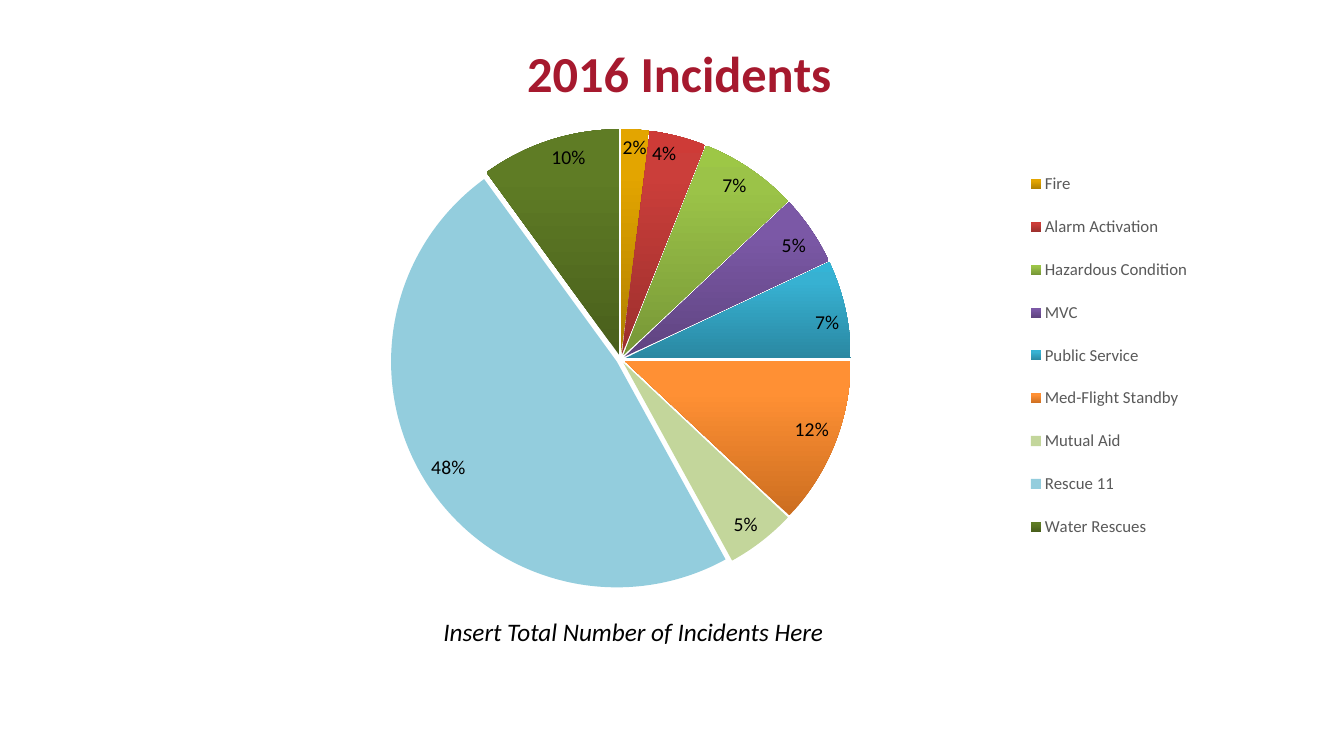
from dataclasses import dataclass

from lxml import etree
from pptx import Presentation
from pptx.chart.data import CategoryChartData
from pptx.dml.color import RGBColor
from pptx.enum.chart import XL_CHART_TYPE as Kind
from pptx.enum.chart import XL_LABEL_POSITION as Spot
from pptx.enum.chart import XL_LEGEND_POSITION as Side
from pptx.oxml import parse_xml
from pptx.oxml.ns import qn
from pptx.util import Inches, Pt

FONT = "Calibri"


@dataclass
class Slice:
    label: str
    share: int
    shades: tuple[str, ...]  # one flat colour, or dark to light


SLICES = [
    Slice("Fire", 2, ("AF7F00", "E3A500", "E4A500")),
    Slice("Alarm Activation", 4, ("9C2F2D", "CB3E3A", "CE3B37")),
    Slice("Hazardous Condition", 7, ("779737", "9BC348", "9DC746")),
    Slice("MVC", 5, ("5F4480", "7B58A6", "7C57A8")),
    Slice("Public Service", 7, ("2A88A2", "37B1D2", "34B4D6")),
    Slice("Med-Flight Standby", 12, ("CC6E20", "FF9034", "FF9136")),
    Slice("Mutual Aid", 5, ("C3D69B",)),
    Slice("Rescue 11", 48, ("93CDDD",)),
    Slice("Water Rescues", 10, ("495F1C", "5F7C25", "607E23")),
]


def style(font, color: str, **values) -> None:
    font.color.rgb = RGBColor.from_string(color)
    for key, value in ({"name": FONT} | values).items():
        setattr(font, key, value)


def paint(fill, shades: tuple[str, ...]) -> None:
    """Fill flat, or with a gradient that runs from bottom to top."""
    if len(shades) == 1:
        fill.solid()
        fill.fore_color.rgb = RGBColor.from_string(shades[0])
        return
    fill.gradient()
    grad = fill._fill._gradFill
    for child in list(grad):
        grad.remove(child)
    stops = etree.SubElement(grad, qn("a:gsLst"))
    for pos, shade in zip((0, 80, 100), shades):
        stop = etree.SubElement(stops, qn("a:gs"), pos=str(pos * 1000))
        etree.SubElement(stop, qn("a:srgbClr"), val=shade)
    etree.SubElement(grad, qn("a:lin"), ang=str(270 * 60000), scaled="0")


def place(part, index: int, inner: bool = False, **box: float) -> None:
    """Give a chart part a fixed place, in percent of the chart."""
    for old in part.findall(qn("c:layout")):
        part.remove(old)
    layout = etree.Element(qn("c:layout"))
    manual = etree.SubElement(layout, qn("c:manualLayout"))
    if inner:
        etree.SubElement(manual, qn("c:layoutTarget"), val="inner")
    for axis in "xy":
        etree.SubElement(manual, qn(f"c:{axis}Mode"), val="edge")
    for key, value in box.items():
        etree.SubElement(manual, qn(f"c:{key}"), val=f"{value / 100:.4f}")
    part.insert(index, parse_xml(etree.tostring(layout)))


def add_pie(slide) -> None:
    data = CategoryChartData()
    data.categories = [s.label for s in SLICES]
    data.add_series("Series 1", [s.share for s in SLICES])
    chart = slide.shapes.add_chart(
        Kind.PIE_EXPLODED, Inches(0.55), 0, Inches(12.5), Inches(6.47), data
    ).chart
    style(chart.font, "000000", size=Pt(10))

    chart.has_title = True
    title = chart.chart_title
    title.include_in_layout = False
    para = title.text_frame.paragraphs[0]
    run = para.add_run()
    run.text = "2016 Incidents"
    style(run.font, "A6192E", size=Pt(36), bold=True)
    place(title._element, 1, x=36.7, y=4.4)

    chart.has_legend = True
    legend = chart.legend
    legend.position = Side.RIGHT
    legend.include_in_layout = False
    style(legend.font, "595959", size=Pt(12))
    place(legend._element, 1, x=76.1, y=23.2, w=15, h=62.6)

    plot = chart.plots[0]
    plot.vary_by_categories = True
    place(chart._chartSpace.chart.plotArea, 0, inner=True,
          x=25.7, y=19.8, w=38.3, h=70.6)
    series = plot.series[0]
    series._element.find(qn("c:explosion")).set("val", "2")
    for i, item in enumerate(SLICES):
        paint(series.points[i].format.fill, item.shades)

    plot.has_data_labels = True
    labels = plot.data_labels
    formats = {
        "show_percentage": True,
        "show_value": False,
        "number_format": "0%",
        "number_format_is_linked": False,
        "position": Spot.INSIDE_END,
    }
    for key, value in formats.items():
        setattr(labels, key, value)
    style(labels.font, "000000", size=Pt(14))


def add_note(slide) -> None:
    box = slide.shapes.add_textbox(
        Inches(4.3), Inches(6.07), Inches(4.76), Inches(0.4))
    box.text_frame.word_wrap = True
    run = box.text_frame.paragraphs[0].add_run()
    run.text = "Insert Total Number of Incidents Here"
    style(run.font, "000000", size=Pt(18), italic=True)


def main() -> None:
    deck = Presentation()
    deck.slide_width, deck.slide_height = Inches(13.33), Inches(7.5)
    slide = deck.slides.add_slide(deck.slide_layouts[6])
    add_pie(slide)
    add_note(slide)
    deck.save("out.pptx")


if __name__ == "__main__":
    main()
